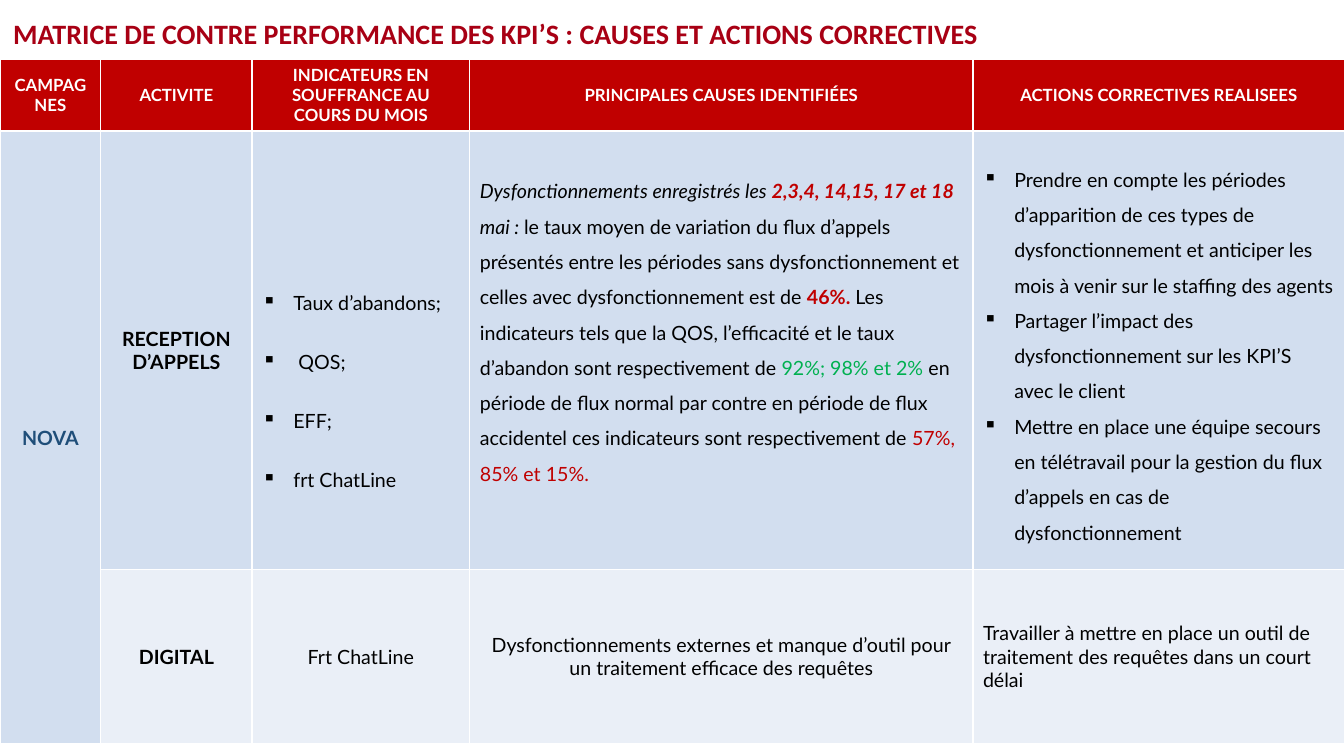
from lxml.etree import SubElement
from pptx import Presentation
from pptx.dml.color import RGBColor as RGB
from pptx.enum.text import MSO_ANCHOR as Anchor, PP_ALIGN as Align
from pptx.oxml.ns import qn
from pptx.util import Inches, Pt

RED = RGB(0xC0, 0x00, 0x00)
CRIMSON = RGB(0xA8, 0x00, 0x14)
GREEN = RGB(0x00, 0xB0, 0x50)
NAVY = RGB(0x1F, 0x4E, 0x79)
BLACK = RGB(0x00, 0x00, 0x00)
WHITE = RGB(0xFF, 0xFF, 0xFF)
BLUE = RGB(0xD2, 0xDE, 0xEF)
PALE = RGB(0xEA, 0xEF, 0xF7)

TITLE = "MATRICE DE CONTRE PERFORMANCE DES KPI’S : CAUSES ET ACTIONS CORRECTIVES"
COLS = [1, 1.5, 2.16, 4.99, 3.69]
ROWS = [0.71, 4.35, 1.73]
HEADS = [
    "CAMPAGNES",
    "ACTIVITE",
    "INDICATEURS EN SOUFFRANCE AU COURS DU MOIS",
    "PRINCIPALES CAUSES IDENTIFIÉES",
    "ACTIONS CORRECTIVES REALISEES",
]
RATES = ["Taux d’abandons;", " QOS;", "EFF;", "frt ChatLine"]
CAUSES = [
    ("Dysfonctionnements enregistrés les ", BLACK, False, True),
    ("2,3,4, 14,15, 17 et 18 ", RED, True, True),
    ("mai : ", BLACK, False, True),
    ("le taux moyen de variation du flux d’appels présentés entre les périodes "
     "sans dysfonctionnement et celles avec dysfonctionnement est de ", BLACK, False, False),
    ("46%. ", RED, True, False),
    ("Les indicateurs tels que la QOS, l’efficacité et le taux d’abandon "
     "sont respectivement de ", BLACK, False, False),
    ("92%; 98% et 2% ", GREEN, False, False),
    ("en période de flux normal par contre en période de flux accidentel "
     "ces indicateurs sont respectivement de ", BLACK, False, False),
    ("57%, 85% et 15%.", RED, False, False),
]
ACTIONS = [
    "Prendre en compte les périodes d’apparition de ces types de dysfonctionnement "
    "et anticiper les mois à venir sur le staffing des agents",
    "Partager l’impact des dysfonctionnement sur les KPI’S avec le client",
    "Mettre en place une équipe secours en télétravail pour la gestion du flux "
    "d’appels en cas de dysfonctionnement",
]
DIGITAL = [
    "DIGITAL",
    "Frt ChatLine",
    "Dysfonctionnements externes et manque d’outil pour un traitement efficace des requêtes",
    "Travailler à mettre en place un outil de traitement des requêtes dans un court délai",
]
GAP = Inches(0.52)


def style(run, size, color, bold=False, italic=False, face="Lato"):
    """Format one run."""
    font = run.font
    font.name, font.size, font.bold, font.italic = face, Pt(size), bold, italic
    font.color.rgb = color


def write(cell, text, size=14, color=BLACK, bold=False, align=Align.CENTER):
    """Put one plain paragraph in a cell."""
    para = cell.text_frame.paragraphs[0]
    para.text = text
    para.alignment = align
    style(para.runs[0], size, color, bold)


def bullets(cell, items, space):
    """Fill a cell with a list of square bullets."""
    frame = cell.text_frame
    frame.text = "\n".join(items)
    for para in frame.paragraphs:
        props = para._p.get_or_add_pPr()
        props.set("marL", str(Inches(0.31)))
        props.set("indent", str(-Inches(0.31)))
        SubElement(props, qn("a:buChar")).set("char", "▪")
        para.line_spacing = space
        style(para.runs[0], 14, BLACK)


def mixed(cell, parts, space):
    """Fill a cell with one paragraph of differently styled runs."""
    para = cell.text_frame.paragraphs[0]
    para.line_spacing = space
    for text, color, bold, italic in parts:
        run = para.add_run()
        run.text = text
        style(run, 14, color, bold, italic)


def heading(slide, left, top, width, height):
    """Place the slide title."""
    frame = slide.shapes.add_textbox(left, top, width, height).text_frame
    frame.word_wrap = True
    frame.vertical_anchor = Anchor.MIDDLE
    frame.margin_left = frame.margin_right = frame.margin_top = frame.margin_bottom = 0
    para = frame.paragraphs[0]
    para.text = TITLE
    para.line_spacing = 0.9
    style(para.runs[0], 20, CRIMSON, True, face="Calibri")


def matrix(slide, left, top, width, height):
    """Place the table of indicators, causes and actions."""
    table = slide.shapes.add_table(len(ROWS), len(COLS), left, top, width, height).table
    for col, size in zip(table.columns, COLS):
        col.width = Inches(size)
    for row, size, fill in zip(table.rows, ROWS, [RED, BLUE, PALE]):
        row.height = Inches(size)
        for cell in row.cells:
            cell.fill.solid()
            cell.fill.fore_color.rgb = fill
            cell.vertical_anchor = Anchor.MIDDLE
    for col, text in enumerate(HEADS):
        write(table.cell(0, col), text, 12, WHITE, True)

    brand, calls, rates, causes, actions = (table.cell(1, col) for col in range(len(COLS)))
    brand.merge(table.cell(2, 0))
    write(brand, "NOVA", color=NAVY, bold=True)
    write(calls, "RECEPTION D’APPELS", bold=True)
    bullets(rates, RATES, 2.5)
    rates.margin_top = GAP
    mixed(causes, CAUSES, 1.5)
    causes.margin_bottom = GAP
    bullets(actions, ACTIONS, 1.5)

    for col, text in enumerate(DIGITAL, 1):
        align = Align.LEFT if col == len(DIGITAL) else Align.CENTER
        write(table.cell(2, col), text, bold=col == 1, align=align)


def main():
    """Build and save the slide."""
    deck = Presentation()
    deck.slide_width, deck.slide_height = Inches(13.33), Inches(7.5)
    slide = deck.slides.add_slide(deck.slide_layouts[6])
    matrix(slide, 0, Inches(0.59), Inches(sum(COLS)), Inches(sum(ROWS)))
    heading(slide, Inches(0.13), Inches(0.2), Inches(12.96), Inches(0.3))
    deck.save("out.pptx")


if __name__ == "__main__":
    main()
